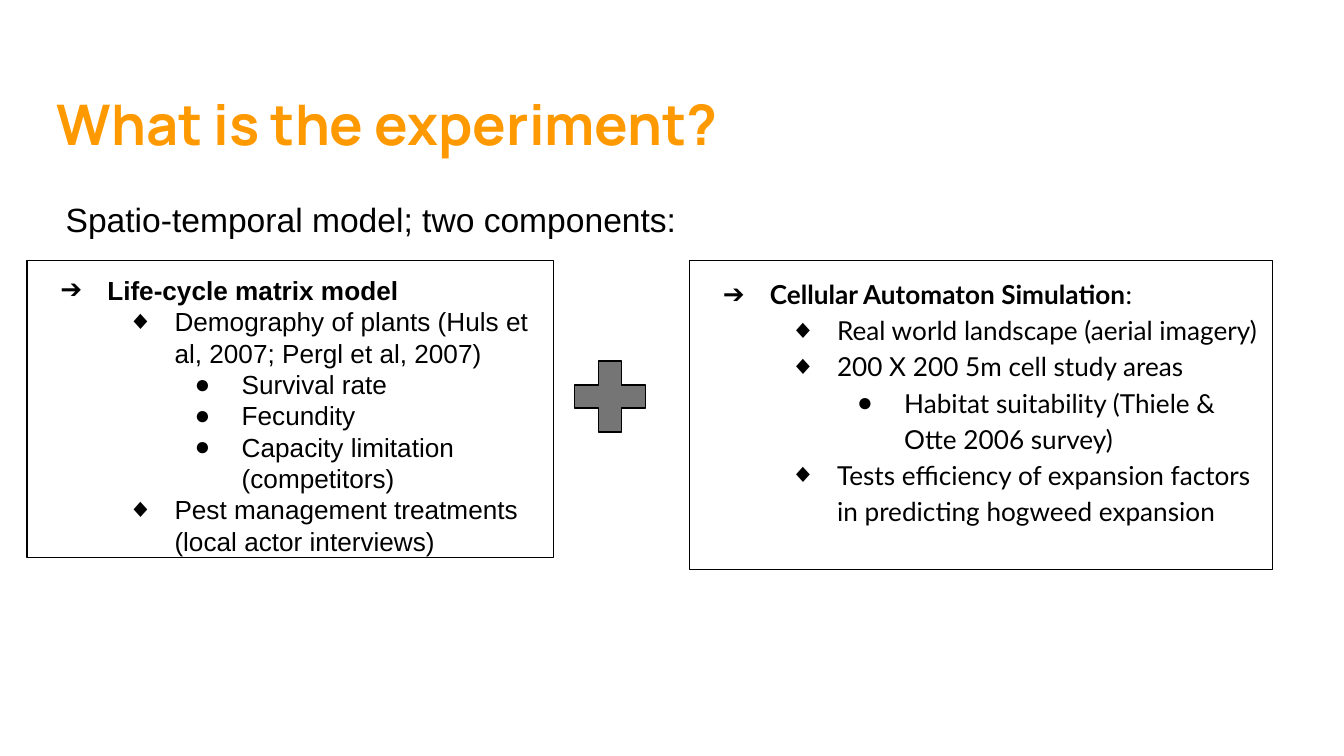
import pptx
import pptx.dml.color
import pptx.enum.shapes
import pptx.enum.text
import pptx.oxml.ns
import pptx.util
import lxml.etree

# Content: each item is (level, runs), each run is (text, bold)
TITLE = "What is the experiment?"
SUBTITLE = "Spatio-temporal model; two components:"
SIMULATION = [
    (0, [("Cellular Automaton Simulation", True), (":", False)]),
    (1, [("Real world landscape (aerial imagery)", False)]),
    (1, [("200 X 200 5m cell study areas", False)]),
    (2, [("Habitat suitability (Thiele & Otte 2006 survey)", False)]),
    (1, [("Tests efficiency of expansion factors in predicting hogweed expansion", False)]),
]
LIFE_CYCLE = [
    (0, [("Life-cycle matrix model", True)]),
    (1, [("Demography of plants (Huls et al, 2007; Pergl et al, 2007)", False)]),
    (2, [("Survival rate", False)]),
    (2, [("Fecundity", False)]),
    (2, [("Capacity limitation (competitors)", False)]),
    (1, [("Pest management treatments (local actor interviews)", False)]),
]

# Format and layout, in inches and points
BULLETS, BULLET_FONT = "➔◆●", "Arial"
INDENT_STEP, HANGING = 0.5, 0.35
BLACK, ORANGE, GRAY = "000000", "FF9900", "757575"
WIDTH = 10
HEIGHT = WIDTH * 9 / 16
BOX_TOP = 1.94
TITLE_AREA = (0.32, 0.44, 6.73, 0.83)
SUBTITLE_AREA = (0.39, 1.38, 6.18, 0.72)
LEFT_BOX = (0.2, BOX_TOP, 3.92, 2.21)
RIGHT_BOX = (5.13, BOX_TOP, 4.34, 2.3)
PLUS_AREA = (4.18, 2.59, 0.72, 0.72)
FRAME_FORMAT = {
    "word_wrap": True,
    "auto_size": pptx.enum.text.MSO_AUTO_SIZE.NONE,
    **{f"margin_{side}": pptx.util.Inches(0.1) for side in ("left", "top", "right", "bottom")},
}


def color(value):
    return pptx.dml.color.RGBColor.from_string(value)


def inches(area):
    return [pptx.util.Inches(value) for value in area]


def set_attributes(target, values):
    for name, value in values.items():
        setattr(target, name, value)


def add_run(paragraph, text, font, size, bold=False, fill=BLACK):
    run = paragraph.add_run()
    run.text = text
    set_attributes(run.font, {"name": font, "size": pptx.util.Pt(size), "bold": bold})
    run.font.color.rgb = color(fill)


def set_outline(shape):
    shape.line.color.rgb = color(BLACK)
    shape.line.width = pptx.util.Pt(0.75)


def add_bullet(paragraph, level):
    properties = paragraph._p.get_or_add_pPr()
    properties.set("marL", str(pptx.util.Inches(INDENT_STEP * (level + 1))))
    properties.set("indent", str(-pptx.util.Inches(HANGING)))
    qualified = pptx.oxml.ns.qn
    bullet_color = lxml.etree.SubElement(properties, qualified("a:buClr"))
    lxml.etree.SubElement(bullet_color, qualified("a:srgbClr"), val=BLACK)
    lxml.etree.SubElement(properties, qualified("a:buFont"), typeface=BULLET_FONT)
    lxml.etree.SubElement(properties, qualified("a:buChar"), char=BULLETS[level])


def add_text_box(slide, area):
    shape = slide.shapes.add_textbox(*inches(area))
    set_attributes(shape.text_frame, FRAME_FORMAT)
    return shape


def add_list_box(slide, area, items, font, spacing):
    shape = add_text_box(slide, area)
    set_outline(shape)
    frame = shape.text_frame
    for index, (level, runs) in enumerate(items):
        paragraph = frame.add_paragraph() if index else frame.paragraphs[0]
        set_attributes(paragraph, {"level": level, "line_spacing": spacing})
        add_bullet(paragraph, level)
        for text, bold in runs:
            add_run(paragraph, text, font, 14, bold)


def main():
    presentation = pptx.Presentation()
    presentation.slide_width, presentation.slide_height = inches((WIDTH, HEIGHT))
    slide = presentation.slides.add_slide(presentation.slide_layouts[5])

    # Title
    title = slide.shapes.title
    set_attributes(title, dict(zip(("left", "top", "width", "height"), inches(TITLE_AREA))))
    set_attributes(title.text_frame, FRAME_FORMAT)
    title.text_frame.vertical_anchor = pptx.enum.text.MSO_ANCHOR.BOTTOM
    paragraph = title.text_frame.paragraphs[0]
    paragraph.alignment = pptx.enum.text.PP_ALIGN.LEFT
    add_run(paragraph, TITLE, "Manrope", 30, True, ORANGE)

    # Two components under a lead-in line
    add_list_box(slide, RIGHT_BOX, SIMULATION, "Lato", 1.15)
    subtitle = add_text_box(slide, SUBTITLE_AREA)
    add_run(subtitle.text_frame.paragraphs[0], SUBTITLE, "Arial", 18)
    add_list_box(slide, LEFT_BOX, LIFE_CYCLE, "Arial", 1.0)

    # Plus sign between the components
    plus = slide.shapes.add_shape(pptx.enum.shapes.MSO_SHAPE.MATH_PLUS, *inches(PLUS_AREA))
    plus.shadow.inherit = False
    plus.adjustments[0] = 0.235
    plus.fill.solid()
    plus.fill.fore_color.rgb = color(GRAY)
    set_outline(plus)

    presentation.save("out.pptx")


if __name__ == "__main__":
    main()
